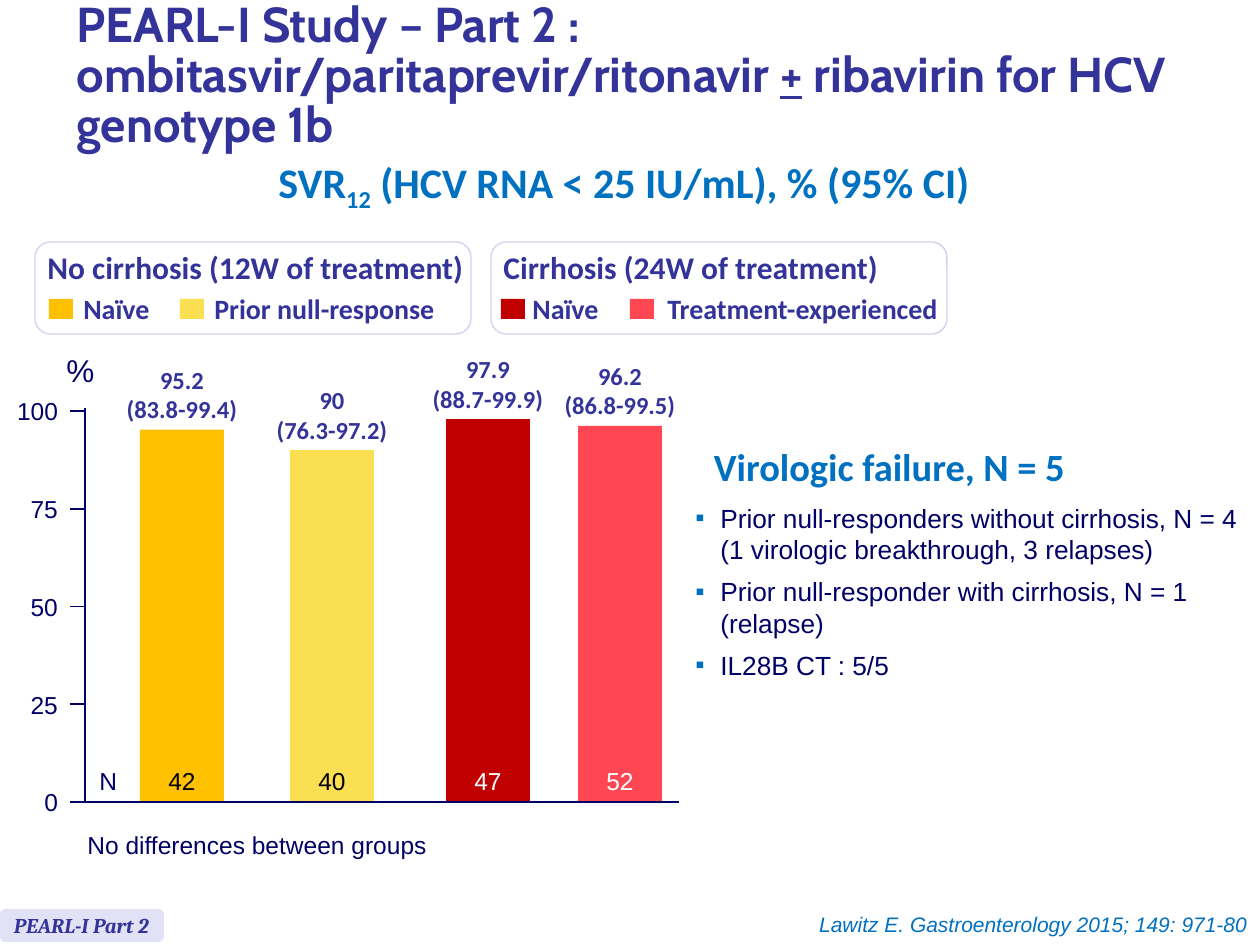
from lxml import etree
from pptx import Presentation
from pptx.dml.color import RGBColor
from pptx.enum.shapes import MSO_CONNECTOR, MSO_SHAPE
from pptx.enum.text import MSO_ANCHOR, MSO_AUTO_SIZE, PP_ALIGN
from pptx.oxml.ns import qn
from pptx.util import Pt

LEFT, CENTER, RIGHT = PP_ALIGN.LEFT, PP_ALIGN.CENTER, PP_ALIGN.RIGHT
TOP, MIDDLE, BOTTOM = MSO_ANCHOR.TOP, MSO_ANCHOR.MIDDLE, MSO_ANCHOR.BOTTOM
RECT, ROUNDED = MSO_SHAPE.RECTANGLE, MSO_SHAPE.ROUNDED_RECTANGLE
STRAIGHT = MSO_CONNECTOR.STRAIGHT
FIT, FIXED = MSO_AUTO_SIZE.SHAPE_TO_FIT_TEXT, MSO_AUTO_SIZE.NONE

COLORS = {
    "indigo": "333399", "navy": "000066", "blue": "0070C0",
    "white": "FFFFFF", "black": "000000", "border": "D0D0F0", "tag": "E2E2F6",
    "amber": "FFC000", "yellow": "FBDF53", "red": "C00000", "coral": "FF4754",
}

TITLE = [
    ("PEARL-I Study – Part 2 : ombitasvir/paritaprevir/ritonavir ", False),
    ("+", True),
    (" ribavirin for HCV genotype 1b", False),
]
HEADING = ["SVR", "12", " (HCV RNA < 25 IU/mL), % (95% CI)"]
LEGENDS = [
    (35, 436, "No cirrhosis (12W of treatment)", 454, [
        (49, 71, 92, "amber", "Naïve"),
        (180, 202, 248, "yellow", "Prior null-response"),
    ]),
    (491, 456, "Cirrhosis (24W of treatment)", 412, [
        (501, 520, 92, "red", "Naïve"),
        (630, 655, 300, "coral", "Treatment-experienced"),
    ]),
]
BARS = [
    (140, 95.2, "95.2", "(83.8-99.4)", "42", "amber", "black"),
    (290, 90, "90", "(76.3-97.2)", "40", "yellow", "black"),
    (446, 97.9, "97.9", "(88.7-99.9)", "47", "red", "white"),
    (578, 96.2, "96.2", "(86.8-99.5)", "52", "coral", "white"),
]
TICKS = [0, 25, 50, 75, 100]
FAILURES = [
    "Prior null-responders without cirrhosis, N = 4\n(1 virologic breakthrough, 3 relapses)",
    "Prior null-responder with cirrhosis, N = 1 (relapse)",
    "IL28B CT : 5/5",
]

AXIS_LEFT, AXIS_RIGHT, AXIS_TOP, BASELINE = 85, 679, 408, 802
PLOT_HEIGHT, BAR_WIDTH, TICK_LENGTH = 391, 84, 15


def px(value):
    return round(value * 914400 / 126)


def rgb(name):
    return RGBColor.from_string(COLORS[name])


def value_y(value):
    return BASELINE - PLOT_HEIGHT * value / 100


def format_text(frame, size, color, font="Arial", bold=False, italic=False, align=LEFT):
    for para in frame.paragraphs:
        para.alignment = align
        for span in para.runs:
            span.font.size = Pt(size)
            span.font.name = font
            span.font.bold = bold
            span.font.italic = italic
            span.font.color.rgb = rgb(color)


def add_text(page, area, text, size, color, anchor=TOP, inset=None, wrap=False, **style):
    box = page.shapes.add_textbox(*map(px, area))
    frame = box.text_frame
    frame.text = text
    frame.word_wrap = wrap
    frame.auto_size = FIXED if wrap else FIT
    frame.vertical_anchor = anchor
    if inset is not None:
        frame.margin_left = frame.margin_right = px(inset)
        frame.margin_top = frame.margin_bottom = px(inset)
    format_text(frame, size, color, **style)
    return frame


def add_block(page, kind, area, fill, line=None):
    block = page.shapes.add_shape(kind, *map(px, area))
    block.shadow.inherit = False
    block.fill.solid()
    block.fill.fore_color.rgb = rgb(fill)
    if line:
        block.line.color.rgb = rgb(line)
        block.line.width = Pt(0.75)
    else:
        block.line.fill.background()
    return block


def add_line(page, x1, y1, x2, y2):
    line = page.shapes.add_connector(STRAIGHT, px(x1), px(y1), px(x2), px(y2))
    line.line.color.rgb = rgb("navy")
    line.line.width = Pt(1)
    etree.SubElement(line._element.spPr, qn("a:effectLst"))


def add_title(page):
    title = page.shapes.title
    title.left, title.top, title.width, title.height = map(px, (64, 10, 1150, 135))
    frame = title.text_frame
    frame.word_wrap = True
    frame.auto_size = FIXED
    frame.vertical_anchor = MIDDLE
    para = frame.paragraphs[0]
    para.line_spacing = 0.85
    for text, underlined in TITLE:
        span = para.add_run()
        span.text = text
        span.font.underline = underlined
    format_text(frame, 28, "indigo", font="Cabin", bold=True)


def add_headings(page):
    style = {"font": "Calibri", "bold": True, "align": CENTER}
    frame = add_text(page, (261, 166, 726, 55), "", 24, "blue")
    para = frame.paragraphs[0]
    for text in HEADING:
        para.add_run().text = text
    format_text(frame, 24, "blue", **style)
    para.runs[1]._r.get_or_add_rPr().set("baseline", "-25000")
    para.line_spacing = Pt(23.6)
    failure = add_text(page, (699, 442, 381, 55), "Virologic failure, N = 5", 22, "blue", **style)
    failure.paragraphs[0].line_spacing = Pt(23.6)


def add_legends(page):
    style = {"font": "Calibri", "bold": True}
    for left, width, heading, heading_width, entries in LEGENDS:
        add_block(page, ROUNDED, (left, 242, width, 92), "white", "border")
        add_text(page, (left, 242, heading_width, 50), heading, 18, "indigo", **style)
        for swatch_left, text_left, text_width, color, label in entries:
            add_block(page, RECT, (swatch_left, 299, 24, 20), color)
            add_text(page, (text_left, 285, text_width, 46), label, 16, "indigo", **style)


def add_bar_chart(page):
    for left, value, rate, interval, count, fill, count_color in BARS:
        top = value_y(value)
        center = left + BAR_WIDTH / 2
        add_block(page, RECT, (left, top, BAR_WIDTH, BASELINE - top), fill)
        add_text(page, (center - 64, top - 70, 128, 69), f"{rate}\n{interval}", 14, "indigo",
                 inset=5, font="Calibri", bold=True, align=CENTER)
        add_text(page, (center - 38, 758, 76, 44), count, 14, count_color,
                 anchor=BOTTOM, align=CENTER)
    for tick in TICKS:
        y = value_y(tick)
        add_line(page, AXIS_LEFT - TICK_LENGTH, y, AXIS_RIGHT if tick == 0 else AXIS_LEFT, y)
        width = 14 * len(str(tick))
        add_text(page, (58 - width, y - 15, width, 30), str(tick), 14, "navy",
                 anchor=MIDDLE, inset=0, align=RIGHT)
    add_line(page, AXIS_LEFT, AXIS_TOP, AXIS_LEFT, BASELINE)
    add_text(page, (52, 345, 57, 50), "%", 18, "navy", align=CENTER)
    add_text(page, (87, 758, 62, 44), "N", 14, "navy", anchor=BOTTOM)
    add_text(page, (75, 824, 540, 44), "No differences between groups", 14, "navy", wrap=True)


def add_failures(page):
    frame = add_text(page, (683, 496, 577, 195), "", 15, "navy", wrap=True)
    for index, text in enumerate(FAILURES):
        para = frame.add_paragraph() if index else frame.paragraphs[0]
        para.text = text
        if index:
            para.space_before = Pt(6)
        properties = para._p.get_or_add_pPr()
        properties.set("marL", str(px(25)))
        properties.set("indent", str(px(-25)))
        color = etree.SubElement(properties, qn("a:buClr"))
        etree.SubElement(color, qn("a:srgbClr"), val=COLORS["blue"])
        etree.SubElement(properties, qn("a:buFont"), typeface="Arial")
        etree.SubElement(properties, qn("a:buChar"), char="▪")
    format_text(frame, 15, "navy")


def add_footer(page):
    add_text(page, (803, 905, 457, 38), "Lawitz E. Gastroenterology 2015; 149: 971-80",
             12, "blue", italic=True, align=RIGHT)
    tag = add_block(page, ROUNDED, (0, 909, 164, 33), "tag")
    frame = tag.text_frame
    frame.text = "PEARL-I Part 2"
    frame.word_wrap = False
    frame.vertical_anchor = MIDDLE
    format_text(frame, 12, "indigo", font="Cambria", bold=True, italic=True)


def main():
    deck = Presentation()
    deck.slide_width, deck.slide_height = px(1260), px(945)
    page = deck.slides.add_slide(deck.slide_layouts[5])
    add_title(page)
    add_headings(page)
    add_legends(page)
    add_bar_chart(page)
    add_failures(page)
    add_footer(page)
    deck.save("out.pptx")


if __name__ == "__main__":
    main()
